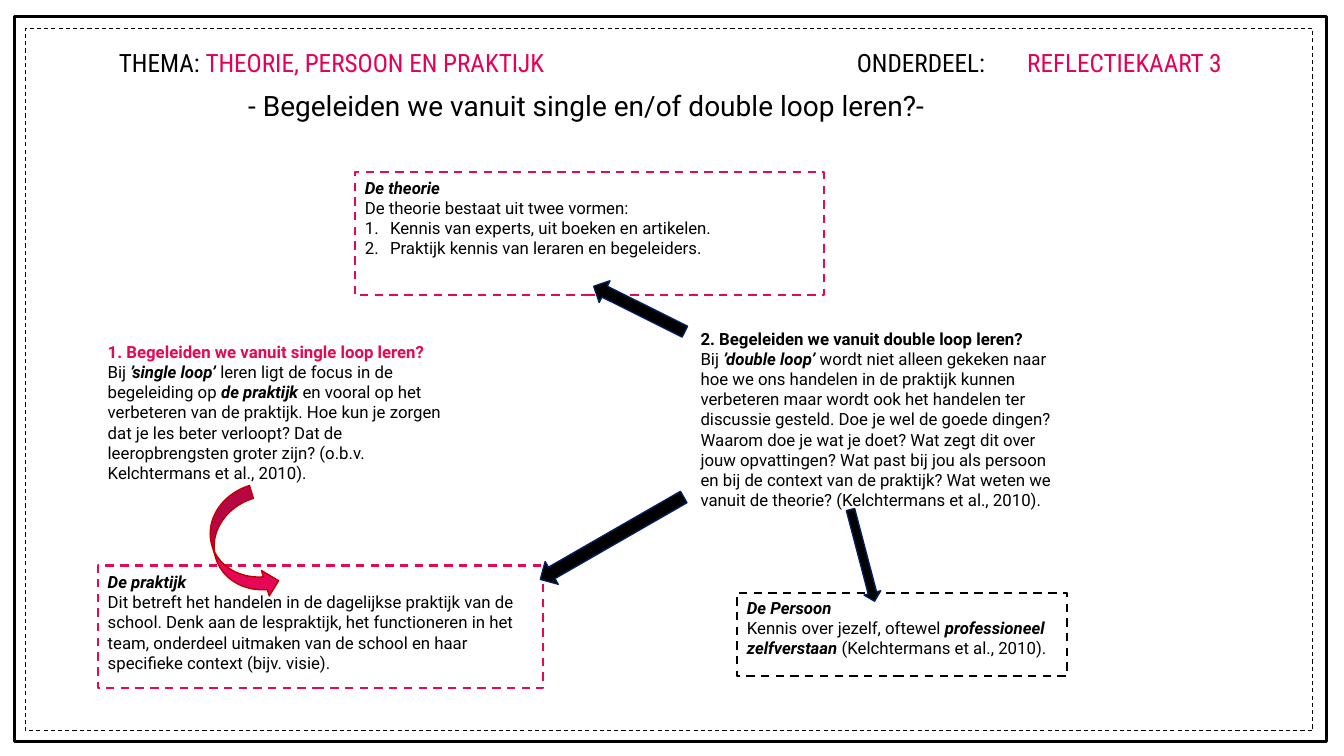
from dataclasses import dataclass, field

from lxml.etree import SubElement
from pptx import Presentation
from pptx.dml.color import RGBColor
from pptx.enum.dml import MSO_LINE
from pptx.enum.shapes import MSO_SHAPE
from pptx.enum.text import MSO_ANCHOR, PP_ALIGN
from pptx.oxml.ns import qn
from pptx.util import Emu, Pt

EMU_PER_PX = 9144
BLACK = RGBColor(0x00, 0x00, 0x00)
WHITE = RGBColor(0xFF, 0xFF, 0xFF)
PINK = RGBColor(0xE5, 0x08, 0x56)
HEADER_PINK = RGBColor(0xE5, 0x00, 0x56)
DARK_RED = RGBColor(0xC0, 0x00, 0x00)
NAVY = RGBColor(0x00, 0x20, 0x60)
HEADER_TABS = (732, 901)
LIST_INDENT = 25

BOLD = {"bold": True}
EMPHASIS = {"bold": True, "italic": True}
HEADER = {"name": "Roboto Condensed", "size": Pt(18)}
LARGE = {"size": Pt(20)}


@dataclass(frozen=True)
class Span:
    text: str
    format: dict = field(default_factory=dict)
    color: RGBColor = BLACK


@dataclass(frozen=True)
class Line:
    spans: tuple[Span, ...]
    format: dict = field(default_factory=dict)
    numbered: bool = False
    tabs: tuple[int, ...] = ()


@dataclass(frozen=True)
class Block:
    box: tuple[int, int, int, int]
    lines: tuple[Line, ...]
    border: RGBColor | None = None


@dataclass(frozen=True)
class Arrow:
    box: tuple[int, int, int, int]
    rotation: float
    kind: MSO_SHAPE = MSO_SHAPE.DOWN_ARROW
    fill: RGBColor = BLACK
    border: RGBColor = NAVY


@dataclass(frozen=True)
class Frame:
    box: tuple[int, int, int, int]
    width: float
    dash: MSO_LINE | None = None


FRAMES = (
    Frame((14, 16, 1302, 720), 2.25),
    Frame((25, 28, 1277, 697), 0.75, MSO_LINE.DASH),
)

BLOCKS = (
    Block((108, 36, 1144, 64), (
        Line((
            Span("THEMA: ", HEADER),
            Span("THEORIE, PERSOON EN PRAKTIJK", HEADER, HEADER_PINK),
            Span("\t", LARGE),
            Span("ONDERDEEL:", HEADER),
            Span("\t", LARGE),
            Span("REFLECTIEKAART 3", HEADER, HEADER_PINK),
        ), {"line_spacing": 1.1}, tabs=HEADER_TABS),
    )),
    Block((160, 78, 850, 46), (
        Line((Span("- Begeleiden we vanuit single en/of double loop leren?- ", LARGE),),
             {"line_spacing": 1.15, "alignment": PP_ALIGN.CENTER}),
    )),
    Block((352, 171, 465, 122), (
        Line((Span("De theorie", EMPHASIS),)),
        Line((Span("De theorie bestaat uit twee vormen:"),)),
        Line((Span("Kennis van experts, uit boeken en artikelen."),), numbered=True),
        Line((Span("Praktijk kennis van leraren en begeleiders."),), numbered=True),
    ), PINK),
    Block((97, 334, 374, 151), (
        Line((Span("1. Begeleiden we vanuit single loop leren?", BOLD, PINK),)),
        Line((
            Span("Bij "),
            Span("’single loop’ ", EMPHASIS),
            Span("leren ligt de focus in de begeleiding op "),
            Span("de praktijk ", EMPHASIS),
            Span("en vooral op het verbeteren van de praktijk. Hoe kun je zorgen dat je les "
                 "beter verloopt? Dat de leeropbrengsten groter zijn? "
                 "(o.b.v. Kelchtermans et al., 2010)."),
        )),
    )),
    Block((685, 321, 374, 222), (
        Line((Span("2. Begeleiden we vanuit double loop leren?", BOLD),)),
        Line((
            Span("Bij "),
            Span("’double loop’", EMPHASIS),
            Span(" wordt niet alleen gekeken naar hoe we ons handelen in de praktijk kunnen "
                 "verbeteren maar wordt ook het handelen ter discussie gesteld. Doe je wel de "
                 "goede dingen? Waarom doe je wat je doet? Wat zegt dit over jouw opvattingen? "
                 "Wat past bij jou als persoon en bij de context van de praktijk? Wat weten we "
                 "vanuit de theorie? (Kelchtermans et al., 2010)."),
        )),
    )),
    Block((97, 561, 442, 122), (
        Line((Span("De praktijk", EMPHASIS),), {"line_spacing": 1.07}),
        Line((Span("Dit betreft het handelen in de dagelijkse praktijk van de school. Denk aan de "
                   "lespraktijk, het functioneren in het team, onderdeel uitmaken van de school "
                   "en haar specifieke context (bijv. visie)."),)),
    ), PINK),
    Block((731, 588, 327, 83), (
        Line((Span("De Persoon", EMPHASIS),)),
        Line((
            Span("Kennis over jezelf, oftewel "),
            Span("professioneel zelfverstaan ", EMPHASIS),
            Span("(Kelchtermans et al., 2010)."),
        )),
    ), BLACK),
)

ARROWS = (
    Arrow((212, 487, 53, 112), 343, MSO_SHAPE.CURVED_RIGHT_ARROW, PINK, DARK_RED),
    Arrow((622, 256, 24, 101), 116.5),
    Arrow((594, 452, 26, 164), 60.1),
    Arrow((847, 504, 17, 94), 345.3),
)


def px(length: int) -> Emu:
    return Emu(length * EMU_PER_PX)


def apply_format(target, values: dict) -> None:
    for name, value in values.items():
        setattr(target, name, value)


def add_outlined_shape(slide, kind: MSO_SHAPE, box: tuple, fill: RGBColor | None,
                       border: RGBColor, width: float, dash: MSO_LINE | None = None):
    shape = slide.shapes.add_shape(kind, *map(px, box))
    shape.shadow.inherit = False
    if fill is None:
        shape.fill.background()
    else:
        shape.fill.solid()
        shape.fill.fore_color.rgb = fill
    shape.line.color.rgb = border
    apply_format(shape.line, {"width": Pt(width), "dash_style": dash})
    return shape


def write_line(paragraph, line: Line) -> None:
    properties = paragraph._p.get_or_add_pPr()
    if line.numbered:
        properties.set("marL", str(px(LIST_INDENT)))
        properties.set("indent", str(px(-LIST_INDENT)))
        SubElement(properties, qn("a:buAutoNum"), type="arabicPeriod")
    if line.tabs:
        tab_list = SubElement(properties, qn("a:tabLst"))
        for position in line.tabs:
            SubElement(tab_list, qn("a:tab"), pos=str(px(position)), algn="l")
    apply_format(paragraph, {"alignment": PP_ALIGN.LEFT} | line.format)
    for span in line.spans:
        run = paragraph.add_run()
        run.text = span.text
        apply_format(run.font, {"name": "Roboto", "size": Pt(12)} | span.format)
        run.font.color.rgb = span.color


def draw_block(slide, block: Block) -> None:
    if block.border is None:
        shape = slide.shapes.add_textbox(*map(px, block.box))
    else:
        shape = add_outlined_shape(slide, MSO_SHAPE.RECTANGLE, block.box, WHITE,
                                   block.border, 1.5, MSO_LINE.DASH)
    frame = shape.text_frame
    apply_format(frame, {"word_wrap": True, "vertical_anchor": MSO_ANCHOR.TOP})
    for index, line in enumerate(block.lines):
        write_line(frame.add_paragraph() if index else frame.paragraphs[0], line)


def main() -> None:
    presentation = Presentation()
    apply_format(presentation, {"slide_width": px(1333), "slide_height": px(750)})
    slide = presentation.slides.add_slide(presentation.slide_layouts[6])
    for frame in FRAMES:
        add_outlined_shape(slide, MSO_SHAPE.RECTANGLE, frame.box, None, BLACK,
                           frame.width, frame.dash)
    for block in BLOCKS:
        draw_block(slide, block)
    for arrow in ARROWS:
        shape = add_outlined_shape(slide, arrow.kind, arrow.box, arrow.fill, arrow.border, 1)
        shape.rotation = arrow.rotation
    presentation.save("out.pptx")


if __name__ == "__main__":
    main()
